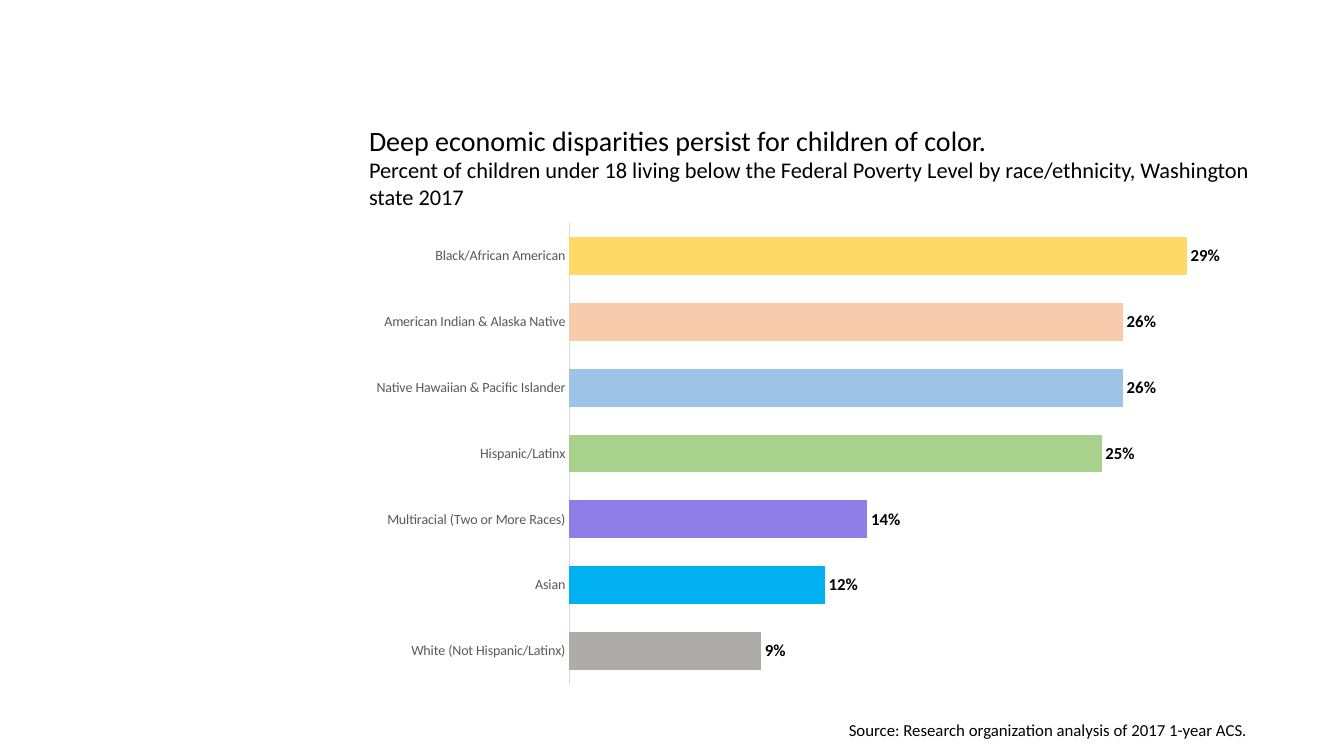
from dataclasses import dataclass

from lxml import etree
from pptx import Presentation
from pptx.chart.data import CategoryChartData
from pptx.dml.color import RGBColor
from pptx.enum.chart import XL_CHART_TYPE, XL_LABEL_POSITION, XL_TICK_LABEL_POSITION, XL_TICK_MARK
from pptx.enum.text import MSO_ANCHOR, MSO_AUTO_SIZE, PP_ALIGN
from pptx.oxml.ns import qn
from pptx.util import Inches, Pt


@dataclass(frozen=True)
class Theme:
    font: str = "Calibri"
    text: str = "000000"
    muted: str = "595959"
    axis: str = "D9D9D9"
    series: str = "4472C4"
    heading_size: int = 20
    subheading_size: int = 16
    note_size: int = 12
    axis_size: int = 10


THEME = Theme()

# Category, share in poverty, bar colour
POVERTY_RATES = [
    ("Black/African American", 0.29, "FFD966"),
    ("American Indian & Alaska Native", 0.26, "F8CBAD"),
    ("Native Hawaiian & Pacific Islander", 0.26, "9DC3E6"),
    ("Hispanic/Latinx", 0.25, "A9D18E"),
    ("Multiracial (Two or More Races)", 0.14, "8F7EE8"),
    ("Asian", 0.12, "00B0F0"),
    ("White (Not Hispanic/Latinx)", 0.09, "AFABAB"),
]


def style_font(font, size, color, bold=False):
    font.name = THEME.font
    font.size = Pt(size)
    font.bold = bold
    font.color.rgb = RGBColor.from_string(color)


def add_text_run(paragraph, text, size):
    paragraph.alignment = PP_ALIGN.LEFT
    run = paragraph.add_run()
    run.text = text
    style_font(run.font, size, THEME.text)


def add_heading(slide, left, top, width, height):
    title = slide.shapes.title
    title.left, title.top = Inches(left), Inches(top)
    title.width, title.height = Inches(width), Inches(height)
    frame = title.text_frame
    frame.word_wrap = True
    frame.auto_size = MSO_AUTO_SIZE.NONE
    frame.vertical_anchor = MSO_ANCHOR.TOP
    add_text_run(frame.paragraphs[0],
                 "Deep economic disparities persist for children of color.",
                 THEME.heading_size)
    add_text_run(frame.add_paragraph(),
                 "Percent of children under 18 living below the Federal Poverty Level "
                 "by race/ethnicity, Washington state 2017",
                 THEME.subheading_size)


def set_plot_area(chart, **fractions):
    """Fix the inner plot area as fractions of the chart box."""
    plot_area = chart.plots[0]._element.getparent()
    layout = plot_area.find(qn("c:layout"))
    if layout is None:
        layout = etree.Element(qn("c:layout"))
        plot_area.insert(0, layout)
    manual = etree.SubElement(layout, qn("c:manualLayout"))
    settings = {"layoutTarget": "inner", "xMode": "edge", "yMode": "edge", **fractions}
    for name, value in settings.items():
        etree.SubElement(manual, qn(f"c:{name}")).set("val", str(value))


def add_poverty_chart(slide, left, top, width, height):
    data = CategoryChartData(number_format="0%")
    data.categories = [category for category, _, _ in POVERTY_RATES]
    data.add_series("Series 1", [rate for _, rate, _ in POVERTY_RATES])
    chart = slide.shapes.add_chart(
        XL_CHART_TYPE.BAR_CLUSTERED, Inches(left), Inches(top),
        Inches(width), Inches(height), data).chart
    chart.has_title = False
    chart.has_legend = False
    style_font(chart.font, THEME.axis_size, THEME.text)
    set_plot_area(chart, x=0.242, y=0.02, w=0.735, h=0.96)

    # Axes
    category_axis = chart.category_axis
    category_axis.reverse_order = True
    category_axis.major_tick_mark = XL_TICK_MARK.NONE
    category_axis.minor_tick_mark = XL_TICK_MARK.NONE
    category_axis.tick_label_position = XL_TICK_LABEL_POSITION.NEXT_TO_AXIS
    category_axis.format.line.color.rgb = RGBColor.from_string(THEME.axis)
    category_axis.format.line.width = Pt(0.75)
    style_font(category_axis.tick_labels.font, THEME.axis_size, THEME.muted)
    value_axis = chart.value_axis
    value_axis.minimum_scale = 0
    value_axis.maximum_scale = 0.3
    value_axis.has_major_gridlines = False
    value_axis.visible = False

    # Bars
    plot = chart.plots[0]
    plot.gap_width = 75
    plot.overlap = 40
    plot.vary_by_categories = False
    series = plot.series[0]
    series.format.fill.solid()
    series.format.fill.fore_color.rgb = RGBColor.from_string(THEME.series)
    for index, (_, _, color) in enumerate(POVERTY_RATES):
        fill = series.points[index].format.fill
        fill.solid()
        fill.fore_color.rgb = RGBColor.from_string(color)

    # Value labels
    labels = series.data_labels
    labels.show_value = True
    labels.number_format = "0%"
    labels.number_format_is_linked = False
    labels.position = XL_LABEL_POSITION.OUTSIDE_END
    style_font(labels.font, THEME.note_size, THEME.text, bold=True)


def add_source_note(slide, left, top, width, height):
    note = slide.shapes.add_textbox(Inches(left), Inches(top), Inches(width), Inches(height))
    note.text_frame.word_wrap = True
    add_text_run(note.text_frame.paragraphs[0],
                 "Source: Research organization analysis of 2017 1-year ACS.",
                 THEME.note_size)


def main():
    presentation = Presentation()
    presentation.slide_width = Inches(13.33)
    presentation.slide_height = Inches(7.5)
    slide = presentation.slides.add_slide(presentation.slide_layouts.get_by_name("Title Only"))
    add_poverty_chart(slide, 3.56, 2.12, 8.62, 4.76)
    add_source_note(slide, 8.32, 7.09, 4.64, 0.3)
    add_heading(slide, 3.56, 1.17, 9.17, 1.23)
    presentation.save("out.pptx")


if __name__ == "__main__":
    main()
